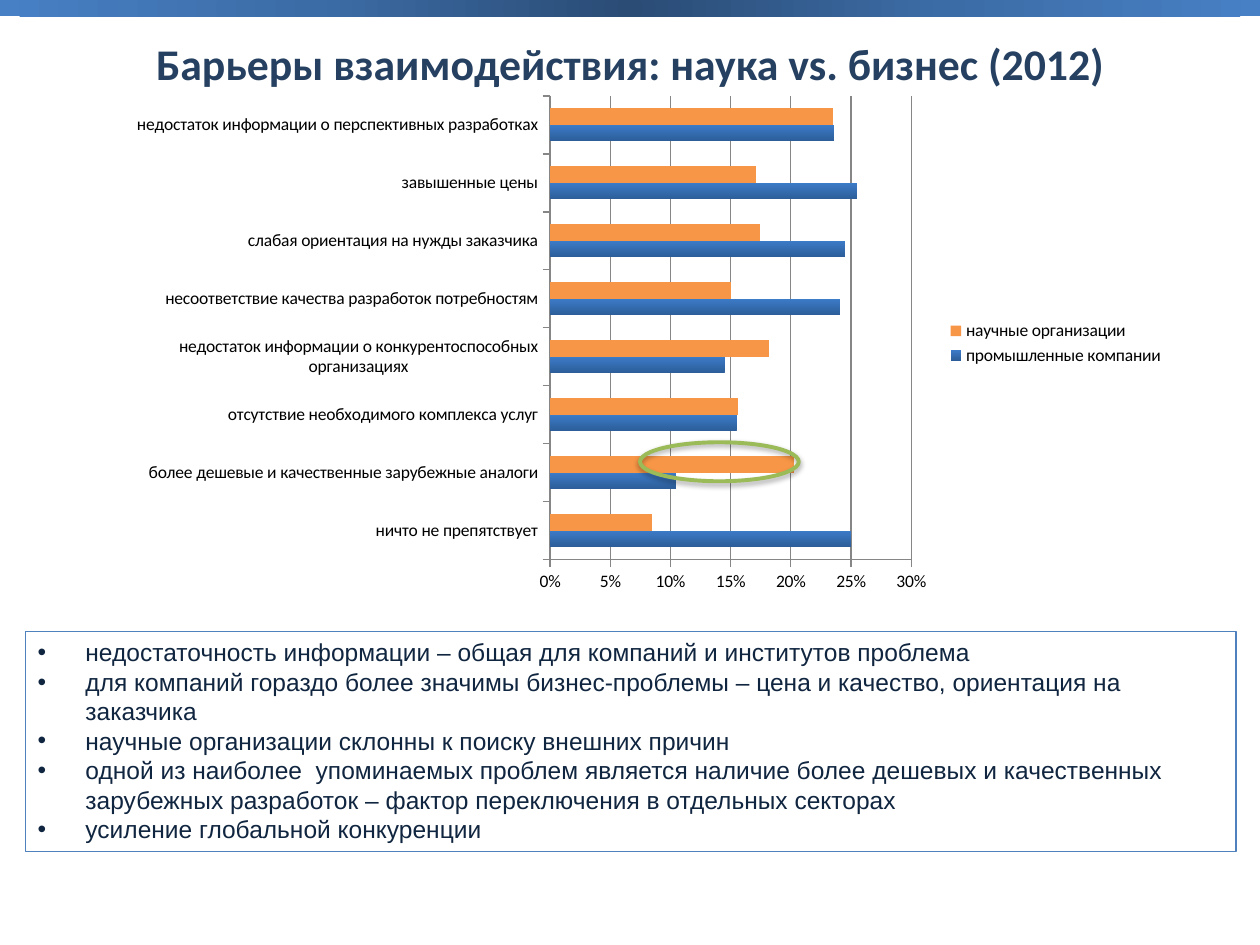
from dataclasses import dataclass

from pptx import Presentation
from pptx.chart.data import CategoryChartData
from pptx.dml.color import RGBColor
from pptx.enum.chart import XL_CHART_TYPE, XL_LEGEND_POSITION, XL_TICK_MARK
from pptx.enum.shapes import MSO_SHAPE
from pptx.enum.text import MSO_ANCHOR, MSO_AUTO_SIZE, PP_ALIGN
from pptx.oxml import parse_xml
from pptx.oxml.ns import nsdecls, qn
from pptx.util import Inches, Pt


@dataclass(frozen=True)
class Theme:
    heading: str = "254061"
    body: str = "10253F"
    label: str = "000000"
    grid: str = "868686"
    outline: str = "4F81BD"
    highlight: str = "9BBB59"
    science: str = "F79646"
    industry: tuple = ("2C5D98", "3C7BC7")
    band: tuple = ((0, "2A4C75"), (50, "3C6CA6"), (100, "4780C5"))
    heading_font: str = "Calibri"
    body_font: str = "Arial"
    heading_size: int = 25
    body_size: int = 14
    label_size: int = 10


THEME = Theme()

BARRIERS = [  # barrier, industrial companies, research organisations
    ("ничто не препятствует", 0.25, 0.085),
    ("более дешевые и качественные зарубежные аналоги", 0.105, 0.203),
    ("отсутствие необходимого комплекса услуг", 0.155, 0.156),
    ("недостаток информации о конкурентоспособных организациях", 0.145, 0.182),
    ("несоответствие качества разработок потребностям", 0.241, 0.15),
    ("слабая ориентация на нужды заказчика", 0.245, 0.174),
    ("завышенные цены", 0.255, 0.171),
    ("недостаток информации о перспективных разработках", 0.236, 0.235),
]

FINDINGS = [
    "недостаточность информации – общая для компаний и институтов проблема",
    "для компаний гораздо более значимы бизнес-проблемы – цена и качество, "
    "ориентация на заказчика",
    "научные организации склонны к поиску внешних причин",
    "одной из наиболее  упоминаемых проблем является наличие более дешевых и "
    "качественных зарубежных разработок – фактор переключения в отдельных секторах",
    "усиление глобальной конкуренции",
]


def box(left, top, width, height):
    return tuple(Inches(length) for length in (left, top, width, height))


def apply(target, settings):
    for name, value in settings.items():
        setattr(target, name, value)


def style_font(font, name, size, color, bold=False):
    apply(font, {"name": name, "size": Pt(size), "bold": bold})
    font.color.rgb = RGBColor.from_string(color)


def style_line(line, color, width):
    line.color.rgb = RGBColor.from_string(color)
    line.width = Pt(width)


def add_plain_shape(slide, kind, place):
    shape = slide.shapes.add_shape(kind, *box(*place))
    shape.shadow.inherit = False
    shape.fill.background()
    return shape


def add_band(slide):
    """Top strip whose gradient runs outward from its centre."""
    band = add_plain_shape(slide, MSO_SHAPE.RECTANGLE, (0, 0, 10, 0.13))
    band.line.fill.background()
    stops = "".join(
        f'<a:gs pos="{position * 1000}"><a:srgbClr val="{color}"/></a:gs>'
        for position, color in THEME.band
    )
    gradient = parse_xml(
        f'<a:gradFill {nsdecls("a")}><a:gsLst>{stops}</a:gsLst><a:path path="circle">'
        '<a:fillToRect l="50000" t="50000" r="50000" b="50000"/></a:path></a:gradFill>'
    )
    properties = band.element.spPr
    properties.replace(properties.find(qn("a:noFill")), gradient)


def set_title(slide, text):
    title = slide.shapes.title
    places = zip(("left", "top", "width", "height"), box(0, 0.24, 10, 0.52))
    apply(title, dict(places))
    frame = title.text_frame
    frame.text = text
    apply(frame, {"word_wrap": True, "auto_size": MSO_AUTO_SIZE.NONE,
                  "vertical_anchor": MSO_ANCHOR.MIDDLE})
    paragraph = frame.paragraphs[0]
    paragraph.alignment = PP_ALIGN.CENTER
    style_font(paragraph.runs[0].font, THEME.heading_font, THEME.heading_size,
               THEME.heading, bold=True)


def place_plot(chart, **fractions):
    """Fix the inner plot area as fractions of the chart frame."""
    values = "".join(f'<c:{key} val="{value}"/>' for key, value in fractions.items())
    layout = parse_xml(
        f'<c:layout {nsdecls("c")}><c:manualLayout><c:layoutTarget val="inner"/>'
        f'<c:xMode val="edge"/><c:yMode val="edge"/>{values}'
        '</c:manualLayout></c:layout>'
    )
    plot_area = chart.element.find(f'.//{qn("c:plotArea")}')
    for automatic in plot_area.findall(qn("c:layout")):
        plot_area.remove(automatic)
    plot_area.insert(0, layout)


def add_barrier_chart(slide):
    barriers, industry_shares, science_shares = zip(*BARRIERS)
    shares = CategoryChartData(number_format="0%")
    shares.categories = barriers
    shares.add_series("промышленные компании", industry_shares)
    shares.add_series("научные организации", science_shares)
    chart = slide.shapes.add_chart(
        XL_CHART_TYPE.BAR_CLUSTERED, *box(0.91, 0.68, 8.43, 4.09), shares
    ).chart
    apply(chart, {"has_title": False, "has_legend": True})
    style_font(chart.font, THEME.heading_font, THEME.label_size, THEME.label)
    apply(chart.legend, {"position": XL_LEGEND_POSITION.RIGHT,
                         "include_in_layout": False})
    place_plot(chart, x=0.41, y=0.02, w=0.34, h=0.9)

    plot = chart.plots[0]
    apply(plot, {"gap_width": 150, "overlap": 0, "vary_by_categories": False})
    industry, science = plot.series
    industry_fill = industry.format.fill
    industry_fill.gradient()
    industry_fill.gradient_angle = 90
    for stop, color in zip(industry_fill.gradient_stops, THEME.industry):
        stop.color.rgb = RGBColor.from_string(color)
    science.format.fill.solid()
    science.format.fill.fore_color.rgb = RGBColor.from_string(THEME.science)

    for axis in (chart.category_axis, chart.value_axis):
        apply(axis, {"major_tick_mark": XL_TICK_MARK.OUTSIDE,
                     "minor_tick_mark": XL_TICK_MARK.NONE})
        style_line(axis.format.line, THEME.grid, 0.75)
    scale = chart.value_axis
    apply(scale, {"minimum_scale": 0, "maximum_scale": 0.3, "major_unit": 0.05,
                  "has_major_gridlines": True})
    apply(scale.tick_labels, {"number_format": "0%", "number_format_is_linked": False})
    style_line(scale.major_gridlines.format.line, THEME.grid, 0.75)


def add_findings(slide):
    panel = add_plain_shape(slide, MSO_SHAPE.RECTANGLE, (0.2, 5.01, 9.61, 1.75))
    style_line(panel.line, THEME.outline, 0.75)
    frame = panel.text_frame
    apply(frame, {"word_wrap": True, "auto_size": MSO_AUTO_SIZE.SHAPE_TO_FIT_TEXT,
                  "vertical_anchor": MSO_ANCHOR.TOP})
    frame.text = "\n".join(FINDINGS)
    for paragraph in frame.paragraphs:
        paragraph.alignment = PP_ALIGN.LEFT
        style_font(paragraph.runs[0].font, THEME.body_font, THEME.body_size, THEME.body)
        properties = paragraph._p.get_or_add_pPr()
        properties.set("marL", str(Inches(0.38)))
        properties.set("indent", str(-Inches(0.38)))
        properties.append(parse_xml(f'<a:buFont {nsdecls("a")} typeface="Arial"/>'))
        properties.append(parse_xml(f'<a:buChar {nsdecls("a")} char="•"/>'))


def add_highlight(slide):
    """Ring with a soft shadow around the foreign-analogues bar."""
    ring = add_plain_shape(slide, MSO_SHAPE.OVAL, (5.08, 3.51, 1.26, 0.31))
    style_line(ring.line, THEME.highlight, 2.25)
    ring.element.spPr.find(qn("a:effectLst")).append(parse_xml(
        f'<a:outerShdw {nsdecls("a")} blurRad="{Pt(3.1)}" dist="{Pt(1.8)}" '
        'dir="5400000" rotWithShape="0"><a:srgbClr val="000000">'
        '<a:alpha val="35000"/></a:srgbClr></a:outerShdw>'
    ))


def main():
    deck = Presentation()
    apply(deck, {"slide_width": Inches(10), "slide_height": Inches(7.5)})
    slide = deck.slides.add_slide(deck.slide_layouts.get_by_name("Title Only"))
    add_band(slide)
    set_title(slide, "Барьеры взаимодействия: наука vs. бизнес (2012)")
    add_barrier_chart(slide)
    add_findings(slide)
    add_highlight(slide)
    deck.save("out.pptx")


if __name__ == "__main__":
    main()
